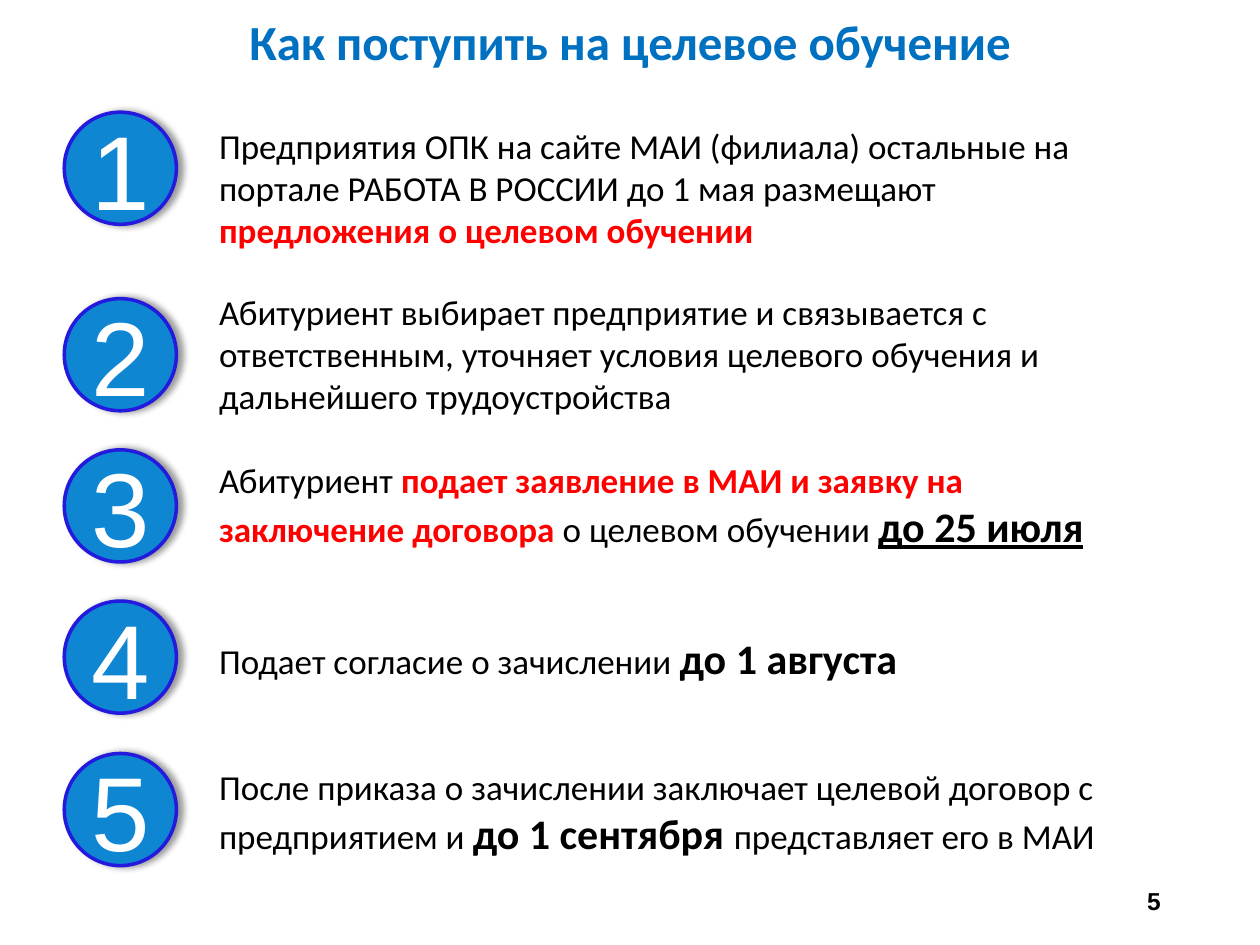
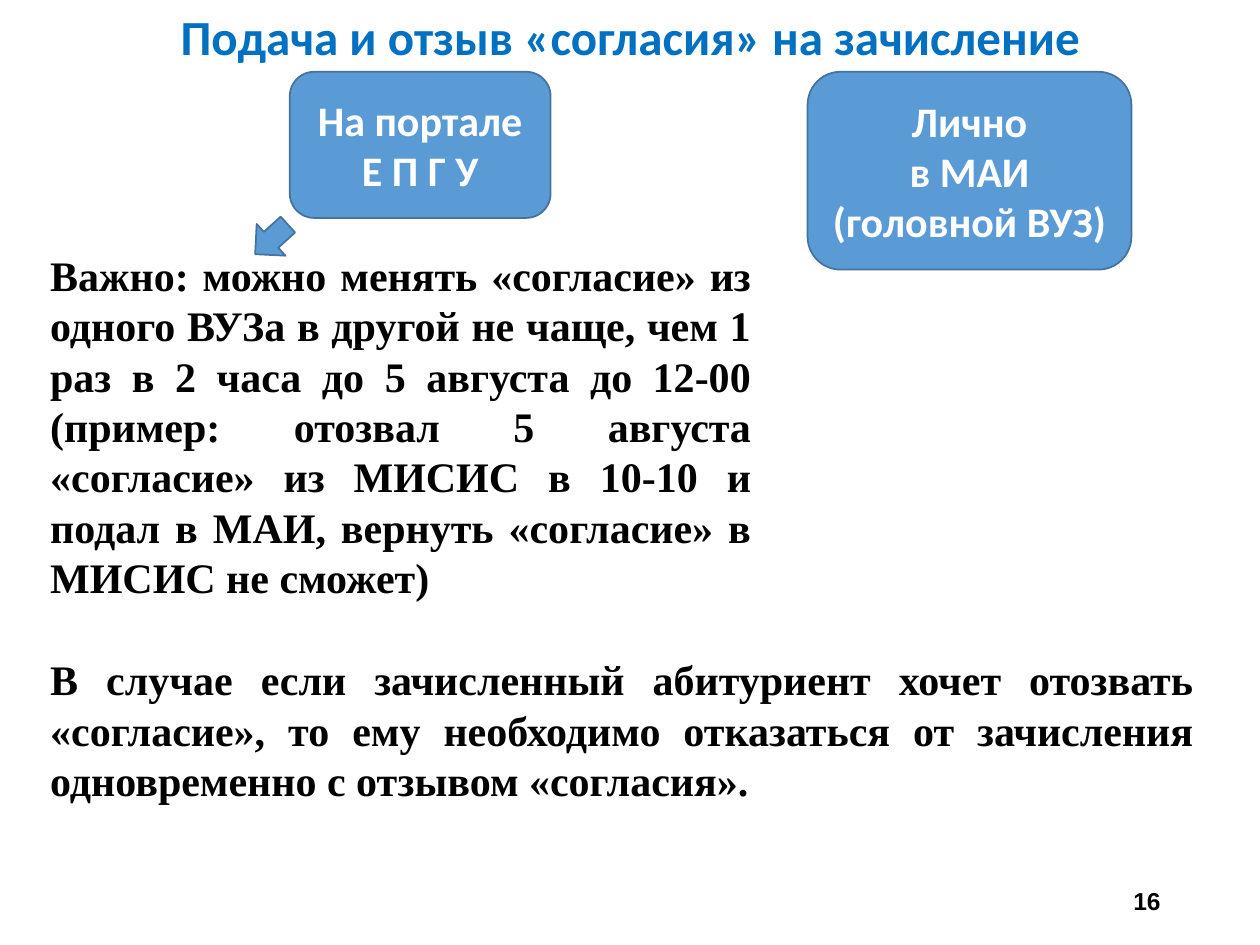
from lxml import etree
from pptx import Presentation
from pptx.dml.color import RGBColor
from pptx.enum import shapes, text
from pptx.oxml.ns import qn
from pptx.util import Inches, Pt

TITLE_BLUE, BLACK, WHITE, RED = "0070C0", "000000", "FFFFFF", "FF0000"
CIRCLE_FILL, CIRCLE_LINE = "0E86D2", "231ADD"
BOX_FILL, BOX_LINE = "5B9BD5", "43739E"
LEFT, CENTER, RIGHT, JUSTIFY = (
    text.PP_ALIGN.LEFT, text.PP_ALIGN.CENTER, text.PP_ALIGN.RIGHT, text.PP_ALIGN.JUSTIFY)


def color(hex_value):
    return RGBColor.from_string(hex_value)


class Deck:
    """Shared style and the slide being built."""

    def __init__(self):
        self.presentation = Presentation()
        self.presentation.slide_width = Inches(10)
        self.presentation.slide_height = Inches(7.5)
        self.slide = None

    def new_slide(self, title, number, title_top):
        self.slide = self.presentation.slides.add_slide(self.presentation.slide_layouts[6])
        self.textbox((0, title_top, 10, 0.57), [title], CENTER,
                     size=28, fill=TITLE_BLUE, bold=True)
        self.textbox((7.06, 6.95, 2.25, 0.4), [number], RIGHT, middle=True,
                     size=14, font="Arial", bold=True)

    def add_runs(self, paragraph, parts, align, **style):
        """Each part is a string or a (string, style changes) pair."""
        paragraph.alignment = align
        for part in parts:
            words, changes = (part, {}) if isinstance(part, str) else part
            look = {"size": 20, "font": "Calibri", "fill": BLACK, "bold": False,
                    "underline": False, **style, **changes}
            run = paragraph.add_run()
            run.text = words
            run.font.size = Pt(look["size"])
            run.font.name = look["font"]
            run.font.bold = look["bold"]
            run.font.underline = look["underline"]
            run.font.color.rgb = color(look["fill"])

    def textbox(self, place, parts, align=LEFT, middle=False, **style):
        frame = self.slide.shapes.add_textbox(*map(Inches, place)).text_frame
        frame.word_wrap = True
        if middle:
            frame.vertical_anchor = text.MSO_ANCHOR.MIDDLE
        self.add_runs(frame.paragraphs[0], parts, align, **style)

    def shape(self, kind, place, fill, line, width, lines=(), wrap=True, **style):
        shape = self.slide.shapes.add_shape(kind, *map(Inches, place))
        shape.shadow.inherit = False
        shape.fill.solid()
        shape.fill.fore_color.rgb = color(fill)
        shape.line.color.rgb = color(line)
        shape.line.width = Pt(width)
        frame = shape.text_frame
        frame.word_wrap = wrap
        frame.vertical_anchor = text.MSO_ANCHOR.MIDDLE
        for index, words in enumerate(lines):
            paragraph = frame.add_paragraph() if index else frame.paragraphs[0]
            self.add_runs(paragraph, [words], CENTER, fill=WHITE, **style)
        return shape

    def circle(self, number, top):
        shape = self.shape(shapes.MSO_SHAPE.OVAL, (0.51, top, 0.89, 0.89), CIRCLE_FILL,
                           CIRCLE_LINE, 2, [number], wrap=False, size=60, font="Arial")
        # Soft shadow to the right
        effects = shape._element.spPr.find(qn("a:effectLst"))
        shadow = etree.SubElement(effects, qn("a:outerShdw"), blurRad=str(Pt(4)),
                                  dist=str(Pt(3)), dir="0", algn="l", rotWithShape="0")
        shade = etree.SubElement(shadow, qn("a:srgbClr"), val=BLACK)
        etree.SubElement(shade, qn("a:alpha"), val="40000")

    def box(self, place, lines):
        self.shape(shapes.MSO_SHAPE.FLOWCHART_ALTERNATE_PROCESS, place,
                   BOX_FILL, BOX_LINE, 1, lines, size=24, bold=True)

    def notice(self, place, words):
        self.textbox(place, [words], JUSTIFY, size=24, font="Times New Roman", bold=True)


def steps_slide(deck):
    deck.new_slide("Как поступить на целевое обучение", "5", 0.04)
    alert = {"fill": RED, "bold": True}
    deadline = {"size": 24, "bold": True}
    # Circle top, text top, text width, text height, text
    steps = [
        (0.89, 0.94, 7.57, 1.11, [
            "Предприятия ОПК на сайте МАИ (филиала) остальные на портале "
            "РАБОТА В РОССИИ до 1 мая размещают ",
            ("предложения о целевом обучении", alert)]),
        (2.37, 2.26, 7.43, 1.11, [
            "Абитуриент выбирает предприятие и связывается с ответственным, "
            "уточняет условия целевого обучения и дальнейшего трудоустройства"]),
        (3.57, 3.59, 7.43, 0.84, [
            "Абитуриент ",
            ("подает заявление в МАИ и заявку на заключение договора", alert),
            " о целевом обучении ",
            ("до 25 июля", {**deadline, "underline": True})]),
        (4.77, 4.97, 7.22, 0.5, [
            "Подает согласие о зачислении ", ("до 1 августа", deadline)]),
        (5.98, 6.03, 7.57, 0.84, [
            "После приказа о зачислении заключает целевой договор с предприятием и ",
            ("до 1 сентября ", deadline), "представляет его в МАИ"]),
    ]
    for number, (circle_top, top, width, height, parts) in enumerate(steps, 1):
        deck.circle(str(number), circle_top)
        deck.textbox((1.64, top, width, height), parts)


def consent_slide(deck):
    deck.new_slide("Подача и отзыв «согласия» на зачисление", "16", 0)
    # Two ways to submit
    deck.box((2.3, 0.57, 2.07, 1.16), ["На портале Е П Г У"])
    deck.box((6.41, 0.57, 2.57, 1.57), ["Лично", "в МАИ (головной ВУЗ)"])
    # Rules for changing and withdrawing consent
    deck.notice((0.3, 1.93, 5.76, 2.93),
                "Важно: можно менять «согласие» из одного ВУЗа в другой не чаще, чем "
                "1 раз в 2 часа до 5 августа до 12-00 (пример: отозвал 5 августа "
                "«согласие» из МИСИС в 10-10 и подал в МАИ, вернуть «согласие» "
                "в МИСИС не сможет)")
    arrow = deck.shape(shapes.MSO_SHAPE.RIGHT_ARROW, (1.98, 1.73, 0.35, 0.34),
                       BOX_FILL, BOX_LINE, 1)
    arrow.rotation = 137.8
    deck.notice((0.3, 5.14, 9.27, 1.31),
                "В случае если зачисленный абитуриент хочет отозвать «согласие», то ему "
                "необходимо отказаться от зачисления одновременно с отзывом «согласия».")


def main():
    deck = Deck()
    steps_slide(deck)
    consent_slide(deck)
    deck.presentation.save("out.pptx")


if __name__ == "__main__":
    main()
